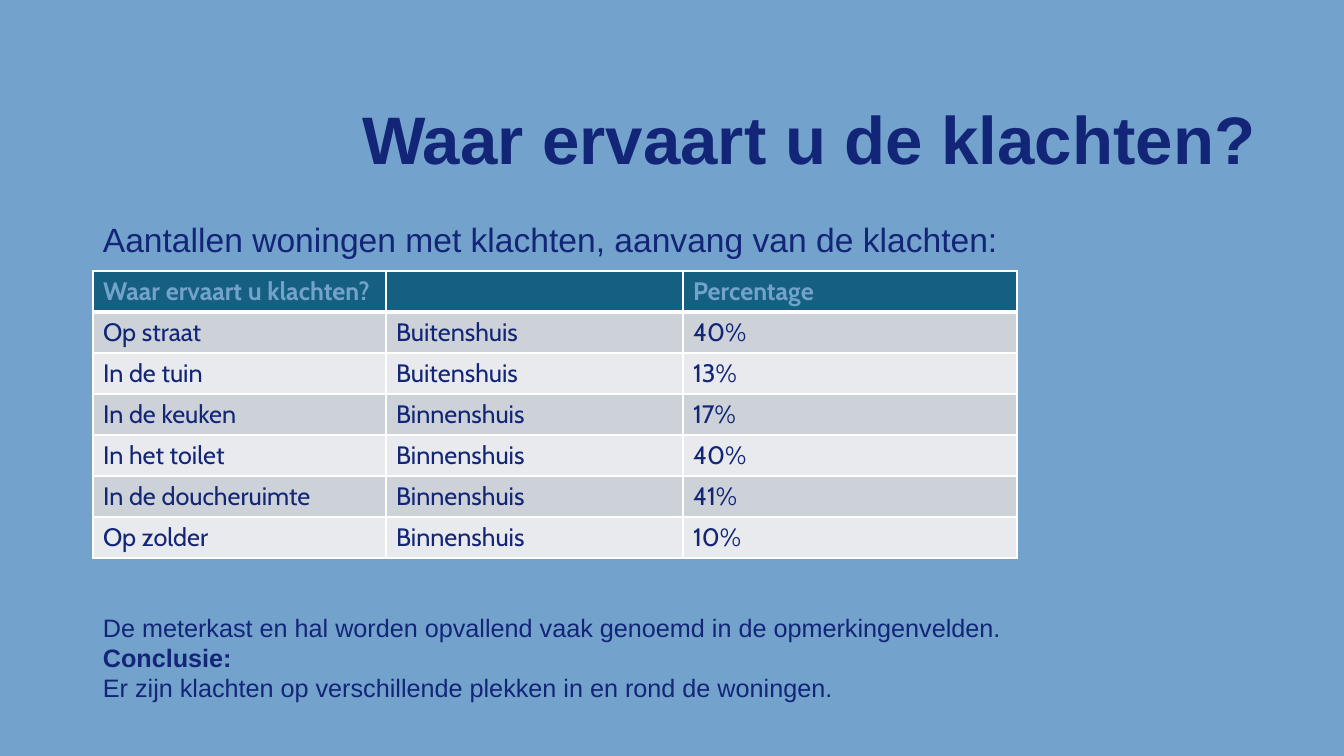
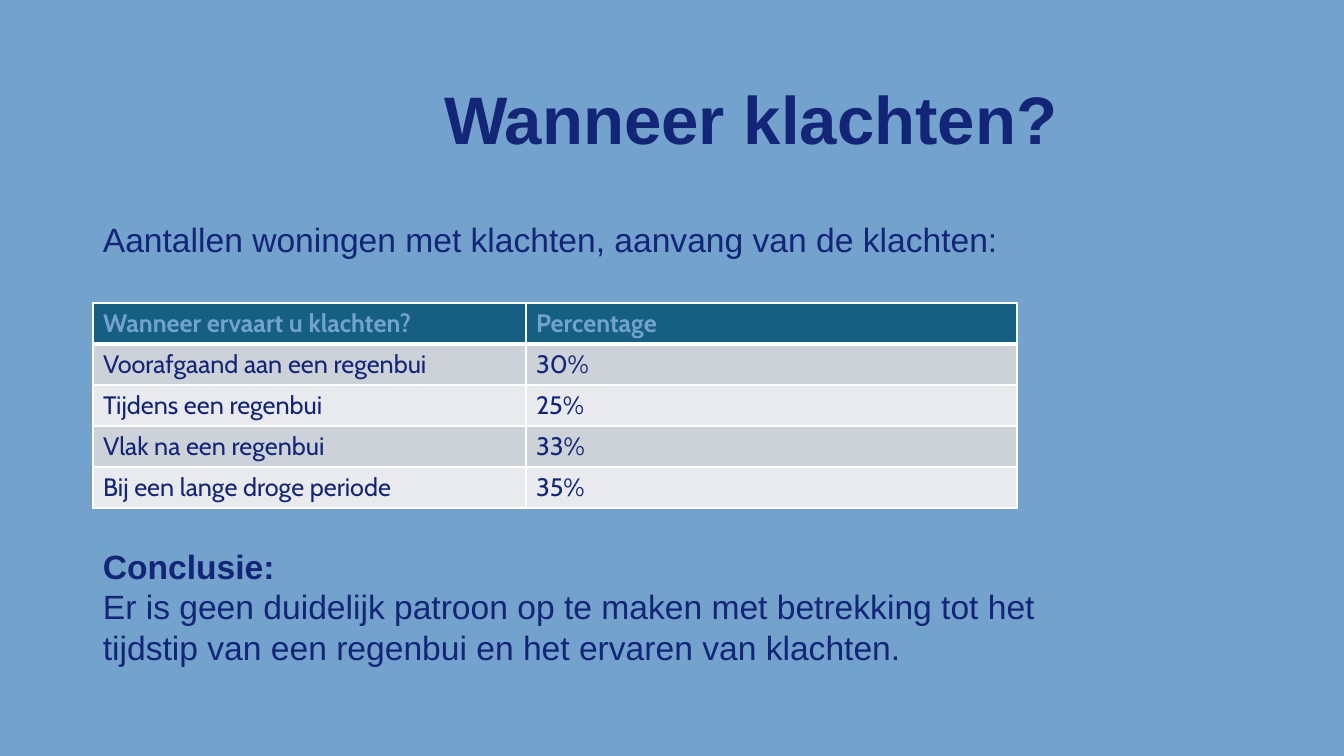
from lxml.etree import SubElement
from pptx import Presentation
from pptx.dml.color import RGBColor
from pptx.enum.text import MSO_ANCHOR as Anchor, MSO_AUTO_SIZE as AutoSize, PP_ALIGN as Align
from pptx.oxml.ns import qn
from pptx.util import Pt

# Shared geometry and style
WIDTH, HEIGHT = 1344, 756
SCALE = 12192000 / WIDTH
LEFT, ROW_HEIGHT = 93, 41
TITLE_ONLY = 5
SKY, NAVY, TEAL, WHITE = "73A2CD", "132577", "156082", "FFFFFF"
BANDS = ("CCD2D8", "E8EAED")
BODY_FONT, TABLE_FONT = "Arial", "Cabin"
SUBTITLE = "Aantallen woningen met klachten, aanvang van de klachten:"


def px(length):
    return round(length * SCALE)


def rgb(color):
    return RGBColor.from_string(color)


def write(para, text, size=18, font=BODY_FONT, color=NAVY, bold=False, spacing=1.0):
    para.alignment = Align.LEFT
    para.line_spacing = spacing
    para.font.size = Pt(size)
    span = para.add_run()
    span.text = text
    span.font.name = font
    span.font.size = Pt(size)
    span.font.bold = bold
    span.font.color.rgb = rgb(color)


def place(shape, left, top, width, height):
    shape.left, shape.top = px(left), px(top)
    shape.width, shape.height = px(width), px(height)


def add_page(deck, title, left, width, height):
    page = deck.slides.add_slide(deck.slide_layouts[TITLE_ONLY])
    box = page.shapes.title
    place(box, left, 72, width, height)
    frame = box.text_frame
    frame.word_wrap = True
    frame.auto_size = AutoSize.NONE
    frame.vertical_anchor = Anchor.BOTTOM
    write(frame.paragraphs[0], title, size=48, bold=True, spacing=0.9)
    add_text(page, [(SUBTITLE, False)], 219, 1159, 52, size=24, spacing=0.9)
    return page


def add_text(page, lines, top, width, height, **style):
    """Each line is a pair: text and whether it is bold."""
    box = page.shapes.add_textbox(px(LEFT), px(top), px(width), px(height))
    frame = box.text_frame
    frame.word_wrap = True
    for index, (text, bold) in enumerate(lines):
        para = frame.add_paragraph() if index else frame.paragraphs[0]
        write(para, text, bold=bold, **style)


def set_borders(cell, top, bottom):
    properties = cell._tc.get_or_add_tcPr()
    for index, (side, points) in enumerate(
            (("lnL", 1), ("lnR", 1), ("lnT", top), ("lnB", bottom))):
        line = SubElement(properties, qn(f"a:{side}"), w=str(Pt(points)))
        fill = SubElement(line, qn("a:solidFill"))
        SubElement(fill, qn("a:srgbClr"), val=WHITE)
        # Borders must come before the cell fill
        properties.insert(index, line)


def add_table(page, rows, widths, top):
    frame = page.shapes.add_table(len(rows), len(widths), px(LEFT), px(top),
                                  px(sum(widths)), px(ROW_HEIGHT * len(rows)))
    table = frame.table
    for column, width in zip(table.columns, widths):
        column.width = px(width)
    for r, values in enumerate(rows):
        table.rows[r].height = px(ROW_HEIGHT)
        header = r == 0
        for c, text in enumerate(values):
            cell = table.cell(r, c)
            cell.fill.solid()
            cell.fill.fore_color.rgb = rgb(TEAL if header else BANDS[(r - 1) % 2])
            set_borders(cell, top=3 if r == 1 else 1, bottom=3 if header else 1)
            if text:
                write(cell.text_frame.paragraphs[0], text, font=TABLE_FONT,
                      color=SKY if header else NAVY, bold=header)


def add_where_page(deck):
    page = add_page(deck, "Waar ervaart u de klachten?", 352, 930, 112)
    add_table(page, [
        ("Waar ervaart u klachten?", "", "Percentage"),
        ("Op straat", "Buitenshuis", "40%"),
        ("In de tuin", "Buitenshuis", "13%"),
        ("In de keuken", "Binnenshuis", "17%"),
        ("In het toilet", "Binnenshuis", "40%"),
        ("In de doucheruimte", "Binnenshuis", "41%"),
        ("Op zolder", "Binnenshuis", "10%"),
    ], (293, 297, 334), 271)
    add_text(page, [
        ("De meterkast en hal worden opvallend vaak genoemd in de opmerkingenvelden.", False),
        ("Conclusie:", True),
        ("Er zijn klachten op verschillende plekken in en rond de woningen.", False),
    ], 607, 940, 102)


def add_when_page(deck):
    page = add_page(deck, "Wanneer klachten?", 434, 816, 92)
    add_table(page, [
        ("Wanneer ervaart u klachten?", "Percentage"),
        ("Voorafgaand aan een regenbui", "30%"),
        ("Tijdens een regenbui", "25%"),
        ("Vlak na een regenbui", "33%"),
        ("Bij een lange droge periode", "35%"),
    ], (433, 491), 303)
    add_text(page, [
        ("Conclusie:", True),
        ("Er is geen duidelijk patroon op te maken met betrekking tot het tijdstip "
         "van een regenbui en het ervaren van klachten.", False),
    ], 541, 1054, 132, size=24)


def main():
    deck = Presentation()
    deck.slide_width, deck.slide_height = px(WIDTH), px(HEIGHT)
    # One background for every slide
    background = deck.slide_master.background.fill
    background.solid()
    background.fore_color.rgb = rgb(SKY)
    add_where_page(deck)
    add_when_page(deck)
    deck.save("out.pptx")


if __name__ == "__main__":
    main()
